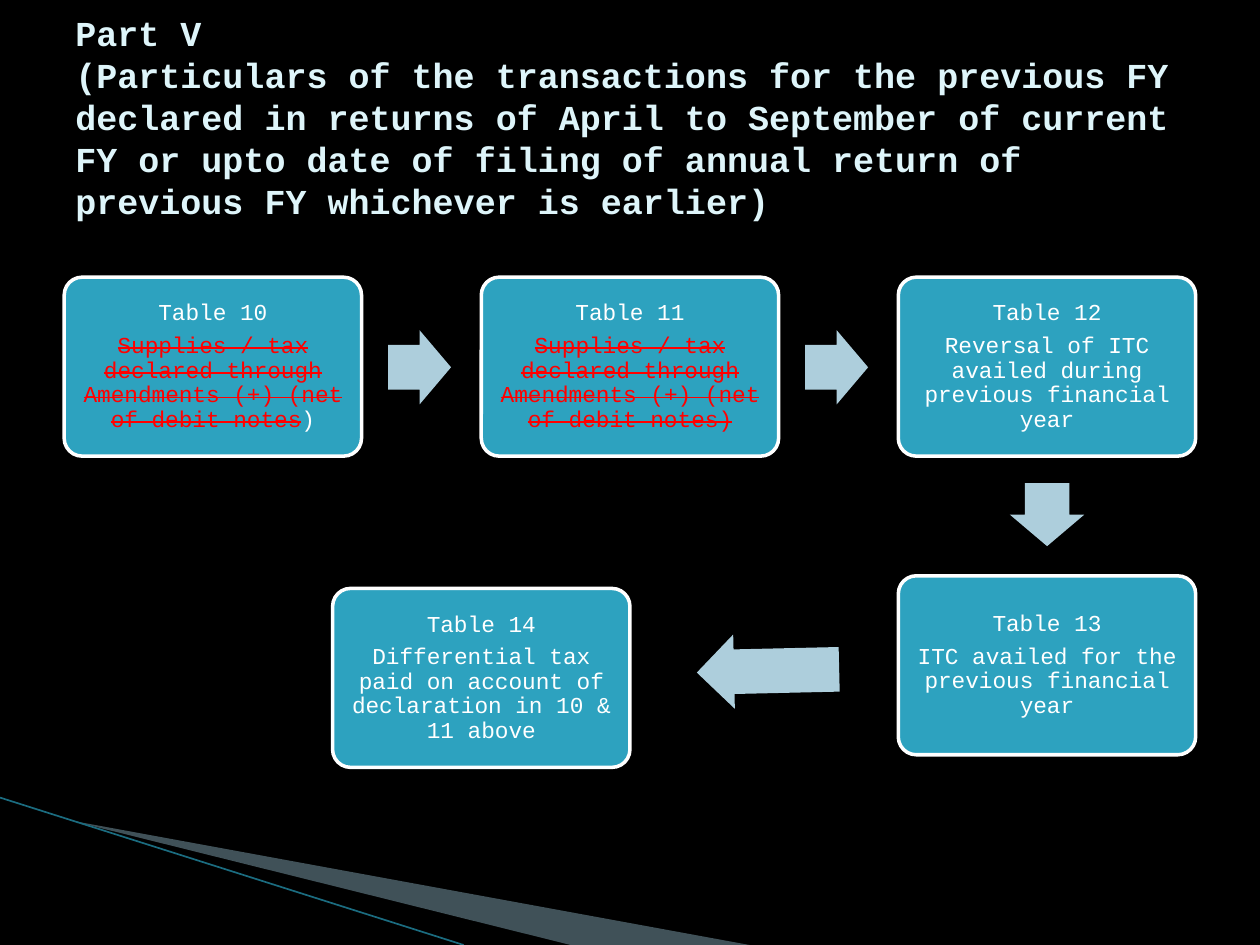
import pptx
import pptx.util
from lxml import etree
from pptx.dml.color import RGBColor
from pptx.enum.shapes import MSO_CONNECTOR, MSO_SHAPE
from pptx.enum.text import MSO_ANCHOR, PP_ALIGN
from pptx.oxml.ns import qn
from pptx.util import Inches, Pt

FONT = "Courier New"
TITLE = (
    "Part V\v(Particulars of the transactions for the previous FY declared in "
    "returns of April to September of current FY or upto date of filing of "
    "annual return of previous FY whichever is earlier)"
)
AMENDMENTS = "Supplies / tax declared through Amendments (+) (net of debit notes"
BOX_WIDTH, BOX_HEIGHT = 2.36, 1.42
COLUMNS = [0.51 + 3.31 * column for column in range(3)]
TOP_ROW = 2.2

# left, top, heading, struck text, plain text
BOXES = [
    (COLUMNS[0], TOP_ROW, "Table 10", AMENDMENTS, ")"),
    (COLUMNS[1], TOP_ROW, "Table 11", AMENDMENTS + ")", ""),
    (COLUMNS[2], TOP_ROW, "Table 12", "", "Reversal of ITC availed during previous financial year"),
    (COLUMNS[2], 4.57, "Table 13", "", "ITC availed for the previous financial year"),
    (2.64, 4.67, "Table 14", "", "Differential tax paid on account of declaration in 10 & 11 above"),
]
# left, top, width, rotation
ARROWS = [
    (3.08, 2.62, 0.5, 0),
    (6.39, 2.62, 0.5, 0),
    (8.06, 3.79, 0.5, 90),
    (5.53, 5.03, 1.13, 178.7),
]
ARROW_HEIGHT = 0.59
WEDGE = [(0.55, 6.51), (5.95, 7.5), (4.53, 7.5)]


def color(value):
    return RGBColor.from_string(value)


def set_fill(shape, value):
    shape.shadow.inherit = False
    shape.fill.solid()
    shape.fill.fore_color.rgb = color(value)


def add_wedge(slide):
    points = [(Inches(x), Inches(y)) for x, y in WEDGE]
    builder = slide.shapes.build_freeform(*points[0])
    builder.add_line_segments(points[1:], close=True)
    wedge = builder.convert_to_shape()
    set_fill(wedge, "A0CBDC")
    wedge.line.fill.background()
    fill_color = wedge.element.spPr.find(qn("a:solidFill"))[0]
    etree.SubElement(fill_color, qn("a:alpha"), val="40000")


def add_edge_line(slide):
    line = slide.shapes.add_connector(
        MSO_CONNECTOR.STRAIGHT, Inches(0), Inches(6.33), Inches(3.68), Inches(7.5)
    )
    line.line.color.rgb = color("1B6C80")
    line.line.width = Pt(0.95)
    etree.SubElement(line.element.spPr, qn("a:effectLst"))


def add_title(slide):
    title = slide.shapes.add_textbox(Inches(0.5), Inches(0.3), Inches(9), Inches(1.25))
    frame = title.text_frame
    frame.word_wrap = True
    frame.vertical_anchor = MSO_ANCHOR.MIDDLE
    paragraph = frame.paragraphs[0]
    paragraph.text = TITLE
    paragraph.font.name = FONT
    paragraph.font.size = Pt(20)
    paragraph.font.bold = True
    paragraph.font.color.rgb = color("DEF5FA")


def add_box(slide, left, top, heading, struck, plain):
    box = slide.shapes.add_shape(
        MSO_SHAPE.ROUNDED_RECTANGLE,
        Inches(left), Inches(top), Inches(BOX_WIDTH), Inches(BOX_HEIGHT),
    )
    box.adjustments[0] = 0.1
    set_fill(box, "2DA2BF")
    box.line.color.rgb = color("FFFFFF")
    box.line.width = Pt(2)
    frame = box.text_frame
    frame.word_wrap = True
    frame.vertical_anchor = MSO_ANCHOR.MIDDLE
    frame.margin_left = frame.margin_right = Inches(0.05)
    frame.margin_top = frame.margin_bottom = Inches(0.05)
    title, body = frame.paragraphs[0], frame.add_paragraph()
    title.text = heading
    title.space_after = Pt(4.5)
    for paragraph in (title, body):
        paragraph.alignment = PP_ALIGN.CENTER
        paragraph.line_spacing = 0.9
        paragraph.font.name = FONT
        paragraph.font.size = Pt(13)
        paragraph.font.color.rgb = color("FFFFFF")
    if struck:
        run = body.add_run()
        run.text = struck
        run.font.color.rgb = color("FF0000")
        run.font._element.set("strike", "sngStrike")
    if plain:
        body.add_run().text = plain


def add_arrow(slide, left, top, width, rotation):
    arrow = slide.shapes.add_shape(
        MSO_SHAPE.RIGHT_ARROW,
        Inches(left), Inches(top), Inches(width), Inches(ARROW_HEIGHT),
    )
    arrow.adjustments[0] = 0.6
    arrow.adjustments[1] = 0.5
    arrow.rotation = rotation
    set_fill(arrow, "ADCEDC")
    arrow.line.fill.background()


def main():
    presentation = pptx.Presentation()
    presentation.slide_width = Inches(10)
    presentation.slide_height = Inches(7.5)
    slide = presentation.slides.add_slide(presentation.slide_layouts[6])
    slide.background.fill.solid()
    slide.background.fill.fore_color.rgb = color("000000")
    add_wedge(slide)
    add_edge_line(slide)
    add_title(slide)
    for box in BOXES:
        add_box(slide, *box)
    for arrow in ARROWS:
        add_arrow(slide, *arrow)
    presentation.save("out.pptx")


if __name__ == "__main__":
    main()
